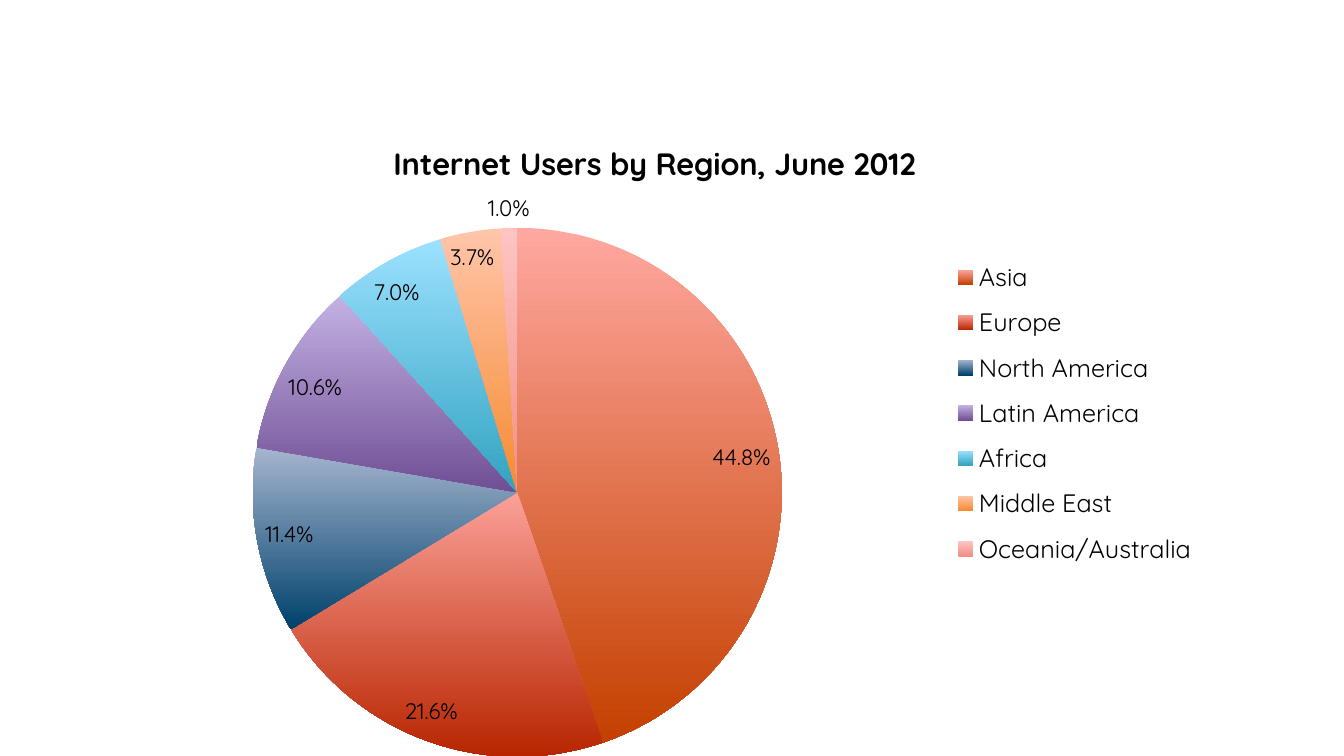
from lxml import etree
from pptx import Presentation
from pptx import util as u
from pptx.chart.data import CategoryChartData
from pptx.dml.color import RGBColor
from pptx.enum import chart as ch
from pptx.oxml.ns import qn

FONT = "Quicksand"
TITLE = "Internet Users by Region, June 2012"
COLORS = {"text": "000000"}
# region: (share, light top colour, dark bottom colour)
REGIONS = {
    "Asia": (0.448, "FFA8A0", "C44000"),
    "Europe": (0.216, "FBA198", "B82500"),
    "North America": (0.114, "A6B5CF", "00416B"),
    "Latin America": (0.106, "C3B1E3", "704F95"),
    "Africa": (0.07, "9BE1FF", "32A3C0"),
    "Middle East": (0.037, "FFC5AB", "F68A30"),
    "Oceania/Australia": (0.01, "FFC4C2", "F08F85"),
}


def style_font(font, size, bold=False):
    values = {"name": FONT, "size": u.Pt(size), "bold": bold}
    for name, value in values.items():
        setattr(font, name, value)
    font.color.rgb = RGBColor.from_string(COLORS["text"])


def set_layout(element, before, inner=False, **fractions):
    """Place a chart part by fractions of the chart, ahead of the tag `before`."""
    for old in element.findall(qn("c:layout")):
        element.remove(old)
    layout = etree.Element(qn("c:layout"))
    manual = etree.SubElement(layout, qn("c:manualLayout"))
    if inner:
        etree.SubElement(manual, qn("c:layoutTarget"), val="inner")
    for axis in "xy":
        etree.SubElement(manual, qn(f"c:{axis}Mode"), val="edge")
    for name, value in fractions.items():
        etree.SubElement(manual, qn(f"c:{name}"), val=str(value))
    element.find(qn(before)).addprevious(layout)


def fill_slices(series):
    for i, (_, light, dark) in enumerate(REGIONS.values()):
        fill = series.points[i].format.fill
        fill.gradient()
        fill.gradient_angle = 270
        for stop, color, position in zip(fill.gradient_stops, (light, dark), (0, 1)):
            stop.color.rgb = RGBColor.from_string(color)
            stop.position = position


def add_region_pie(slide, left, top, width, height):
    data = CategoryChartData(number_format="0.0%")
    data.categories = list(REGIONS)
    data.add_series(TITLE, [share for share, _, _ in REGIONS.values()])
    box = [u.Inches(v) for v in (left, top, width, height)]
    chart = slide.shapes.add_chart(ch.XL_CHART_TYPE.PIE, *box, data).chart
    style_font(chart.font, 18)

    chart.has_title = True
    tf = chart.chart_title.text_frame
    tf.text = TITLE
    style_font(tf.paragraphs[0].runs[0].font, 22, bold=True)
    chart.chart_title.include_in_layout = False
    set_layout(chart.chart_title._element, "c:overlay", x=0.27, y=0.04)

    chart.has_legend = True
    chart.legend.position = ch.XL_LEGEND_POSITION.RIGHT
    chart.legend.include_in_layout = False
    style_font(chart.legend.font, 18)
    set_layout(chart.legend._element, "c:overlay", x=0.77, y=0.21, w=0.22, h=0.5)

    plot = chart.plots[0]
    plot.vary_by_categories = True
    plot_area = plot._element.getparent()
    set_layout(plot_area, "c:pieChart", inner=True, x=0.15, y=0.18, w=0.47, h=0.8)
    fill_slices(plot.series[0])

    plot.has_data_labels = True
    labels = plot.data_labels
    values = {"show_value": True, "show_percentage": False, "number_format": "0.0%",
              "number_format_is_linked": False, "position": ch.XL_LABEL_POSITION.BEST_FIT}
    for name, value in values.items():
        setattr(labels, name, value)
    style_font(labels.font, 16)


def main():
    prs = Presentation()
    prs.slide_width, prs.slide_height = u.Inches(13.33), u.Inches(7.5)
    slide = prs.slides.add_slide(prs.slide_layouts[6])
    add_region_pie(slide, 0.83, 1.08, 11.17, 6.56)
    prs.save("out.pptx")


if __name__ == "__main__":
    main()
